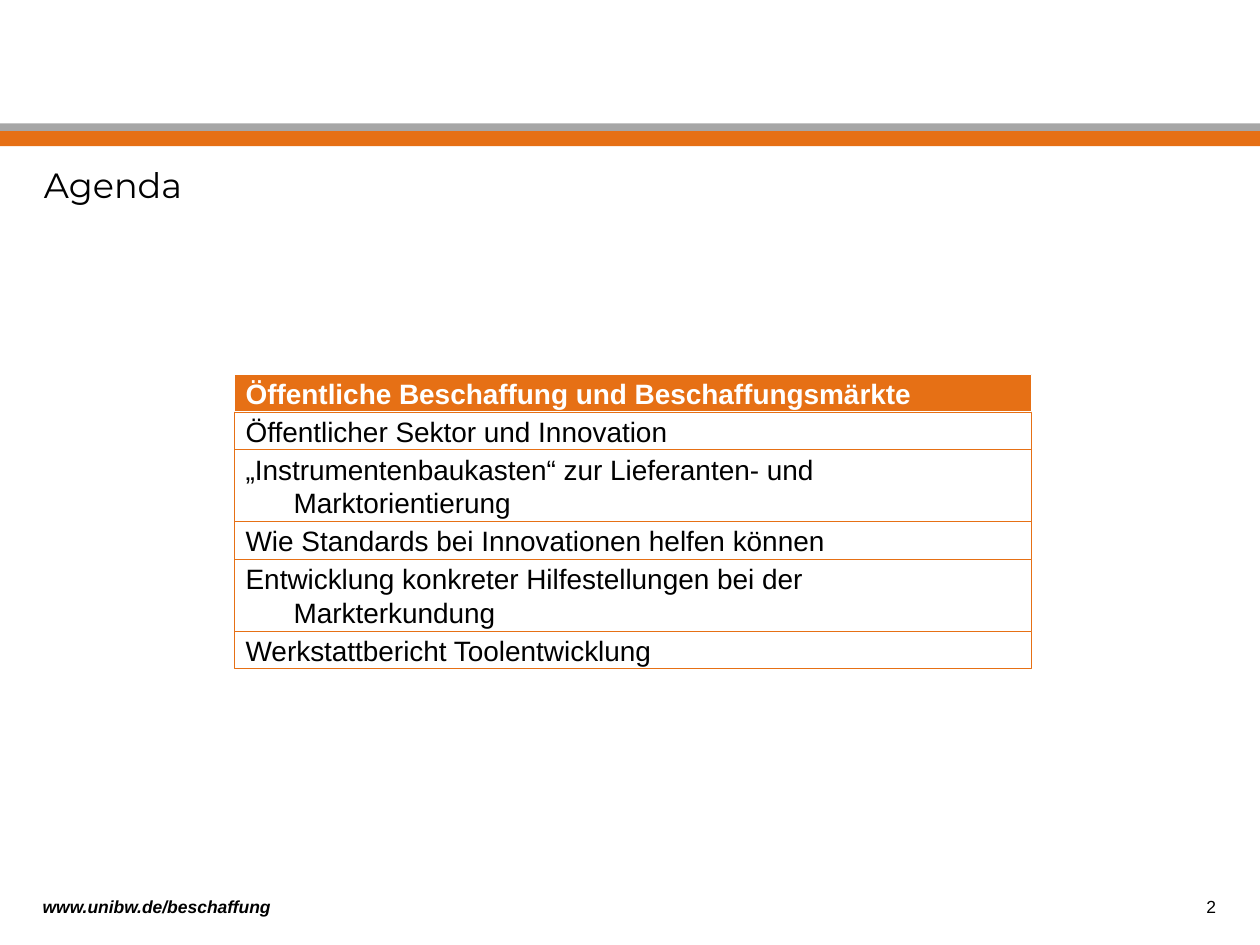
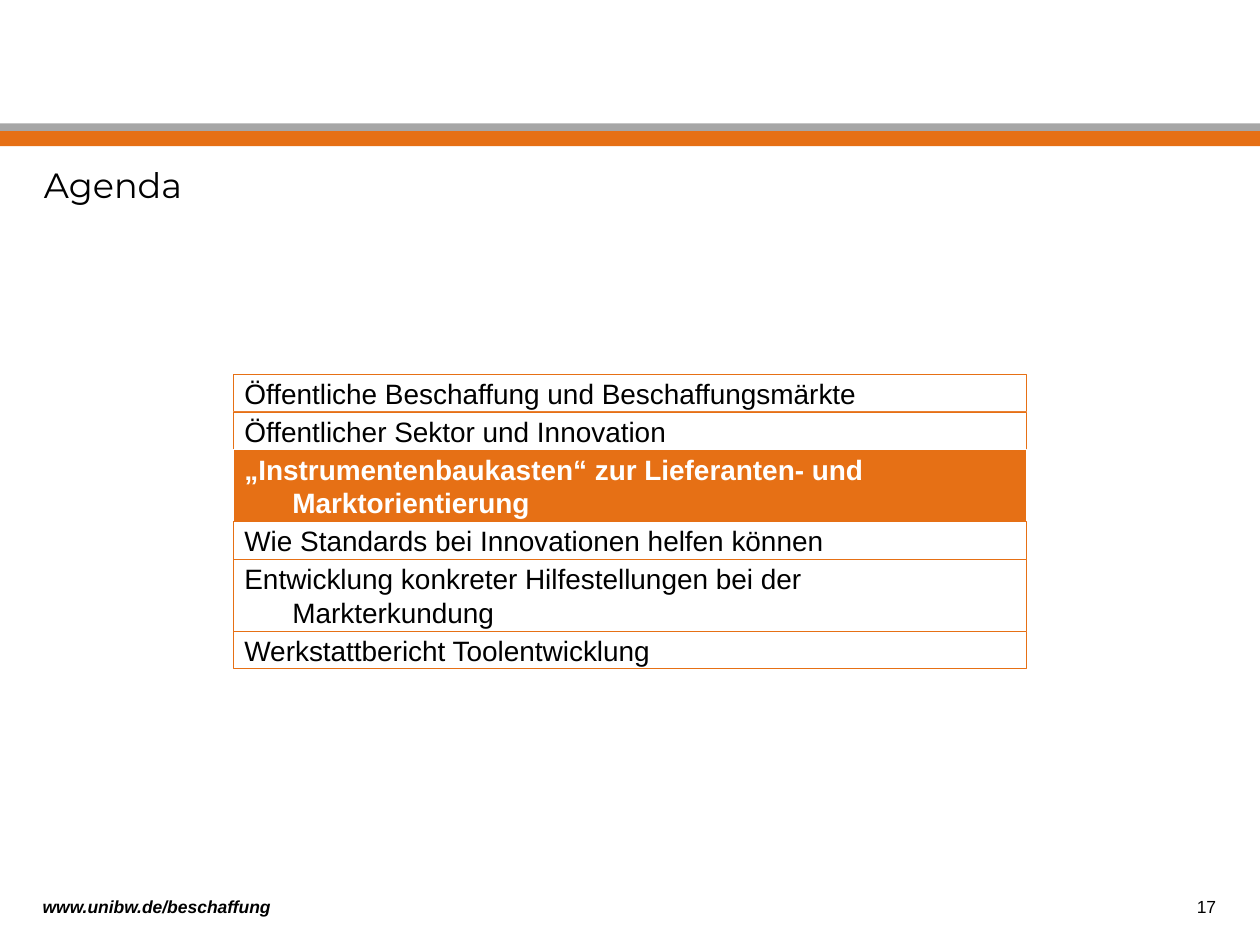
from pptx import Presentation
from pptx import util as u
from pptx.dml import color
from pptx.enum import shapes, text

COLORS = {"orange": "E67015", "gray": "A6A6A6", "white": "FFFFFF", "black": "000000"}
TOPICS = [
    ("Öffentliche Beschaffung und Beschaffungsmärkte", 1),
    ("Öffentlicher Sektor und Innovation", 1),
    ("„Instrumentenbaukasten“ zur Lieferanten- und Marktorientierung", 2),
    ("Wie Standards bei Innovationen helfen können", 1),
    ("Entwicklung konkreter Hilfestellungen bei der Markterkundung", 2),
    ("Werkstattbericht Toolentwicklung", 1),
]
ROW_HEIGHTS = {1: 0.3, 2: 0.57}
RIGHT_INSETS = {1: 0, 2: 0.3}


def rgb(name):
    return color.RGBColor.from_string(COLORS[name])


def write(frame, words, size=16, font="Arial", ink="black", bold=False, italic=False,
          align=text.PP_ALIGN.LEFT, anchor=text.MSO_ANCHOR.TOP,
          insets=(0.1, 0.05, 0.1, 0.05), hanging=0):
    frame.word_wrap = True
    frame.vertical_anchor = anchor
    (frame.margin_left, frame.margin_top,
     frame.margin_right, frame.margin_bottom) = map(u.Inches, insets)
    paragraph = frame.paragraphs[0]
    paragraph.alignment = align
    if hanging:
        properties = paragraph._p.get_or_add_pPr()
        properties.set("marL", str(u.Inches(hanging)))
        properties.set("indent", str(-u.Inches(hanging)))
    run = paragraph.add_run()
    run.text = words
    run.font.size, run.font.name = u.Pt(size), font
    run.font.bold, run.font.italic = bold, italic
    run.font.color.rgb = rgb(ink)


class AgendaDeck:
    """Hold the shared style and the slide being built."""

    def __init__(self):
        self.deck = Presentation()
        self.deck.slide_width, self.deck.slide_height = u.Inches(10), u.Inches(7.5)
        self.slide = None

    def start_slide(self, title, number):
        self.slide = self.deck.slides.add_slide(self.deck.slide_layouts[6])
        self.bar(0, 1.04, 10, 0.12, "orange")
        self.bar(0, 0.98, 10, 0.06, "gray")
        self.label(0.24, 6.75, 2.95, 0.58, "www.unibw.de/beschaffung", size=10,
                   bold=True, italic=True, anchor=text.MSO_ANCHOR.BOTTOM)
        self.label(3.66, 6.75, 6.09, 0.58, str(number), size=10,
                   align=text.PP_ALIGN.RIGHT, anchor=text.MSO_ANCHOR.BOTTOM)
        self.label(0.25, 1.25, 9.5, 0.83, title, size=20, font="Montserrat")

    def bar(self, left, top, width, height, fill, edge=None):
        bar = self.slide.shapes.add_shape(
            shapes.MSO_SHAPE.RECTANGLE, *map(u.Inches, (left, top, width, height)))
        bar.shadow.inherit = False
        bar.fill.solid()
        bar.fill.fore_color.rgb = rgb(fill)
        if edge:
            bar.line.color.rgb = rgb(edge)
            bar.line.width = u.Pt(0.5)
        else:
            bar.line.fill.background()
        return bar

    def label(self, left, top, width, height, words, **style):
        label = self.slide.shapes.add_textbox(*map(u.Inches, (left, top, width, height)))
        write(label.text_frame, words, **style)

    def agenda(self, left, top, width, current):
        for index, (topic, lines) in enumerate(TOPICS):
            active = index == current
            fill, edge, ink = (("orange", "white", "white") if active
                               else ("white", "orange", "black"))
            row = self.bar(left, top, width, ROW_HEIGHTS[lines], fill, edge)
            write(row.text_frame, topic, ink=ink, bold=active, hanging=0.38,
                  anchor=text.MSO_ANCHOR.MIDDLE,
                  insets=(0.09, 0.02, RIGHT_INSETS[lines], 0.02))
            top += ROW_HEIGHTS[lines]


def main():
    agenda_deck = AgendaDeck()
    for number, current, left, width in ((2, 0, 1.86, 6.33), (17, 2, 1.85, 6.3)):
        agenda_deck.start_slide("Agenda", number)
        agenda_deck.agenda(left, 2.97, width, current)
    agenda_deck.deck.save("out.pptx")


if __name__ == "__main__":
    main()
